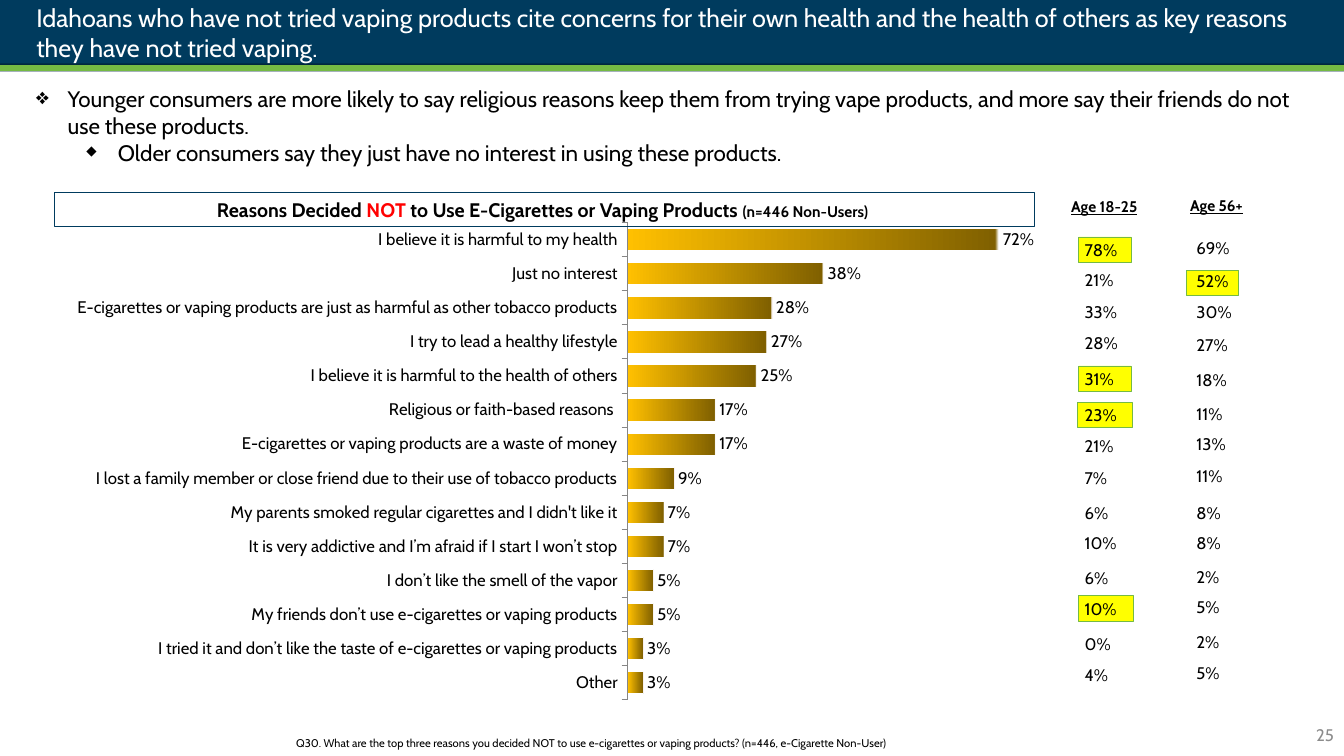
from copy import deepcopy

from lxml import etree
from pptx import Presentation
from pptx.chart.data import CategoryChartData
from pptx.dml.color import RGBColor
from pptx.enum.chart import XL_CHART_TYPE, XL_LABEL_POSITION, XL_TICK_MARK
from pptx.enum.shapes import MSO_CONNECTOR, MSO_SHAPE
from pptx.enum.text import MSO_ANCHOR, MSO_AUTO_SIZE, PP_ALIGN
from pptx.oxml.ns import qn
from pptx.util import Pt

BAR_CHART = XL_CHART_TYPE.BAR_CLUSTERED
LABEL_OUTSIDE = XL_LABEL_POSITION.OUTSIDE_END
TICK_OUTSIDE, TICK_NONE = XL_TICK_MARK.OUTSIDE, XL_TICK_MARK.NONE
STRAIGHT, RECTANGLE = MSO_CONNECTOR.STRAIGHT, MSO_SHAPE.RECTANGLE
TOP, MIDDLE = MSO_ANCHOR.TOP, MSO_ANCHOR.MIDDLE
NO_AUTOFIT = MSO_AUTO_SIZE.NONE
LEFT, CENTER, RIGHT = PP_ALIGN.LEFT, PP_ALIGN.CENTER, PP_ALIGN.RIGHT

FONT = "Cabin"
TITLE_ONLY = 5
NO_TABLE_STYLE = "{2D5ABB26-0587-4C30-8999-92F81FD0307C}"
COLORS = {
    "black": "000000", "white": "FFFFFF", "red": "FF0000", "yellow": "FFFF00",
    "green": "75BA43", "navy": "003B5E", "deep": "00273F", "gray": "8C8C8C",
    "axis": "868686", "gold": "FFC000", "bronze": "806000",
}
REASONS = [
    ("I believe it is harmful to my health", 0.72),
    ("Just no interest", 0.38),
    ("E-cigarettes or vaping products are just as harmful as other tobacco products", 0.28),
    ("I try to lead a healthy lifestyle", 0.27),
    ("I believe it is harmful to the health of others", 0.25),
    ("Religious or faith-based reasons ", 0.17),
    ("E-cigarettes or vaping products are a waste of money", 0.17),
    ("I lost a family member or close friend due to their use of tobacco products", 0.09),
    ("My parents smoked regular cigarettes and I didn't like it", 0.07),
    ("It is very addictive and I’m afraid if I start I won’t stop", 0.07),
    ("I don’t like the smell of the vapor", 0.05),
    ("My friends don’t use e-cigarettes or vaping products", 0.05),
    ("I tried it and don’t like the taste of e-cigarettes or vaping products", 0.03),
    ("Other", 0.03),
]
YOUNGER = [78, 21, 33, 28, 31, 23, 21, 7, 6, 10, 6, 10, 0, 4]
OLDER = [69, 52, 30, 27, 18, 11, 13, 11, 8, 8, 2, 5, 2, 5]
YOUNGER_ROWS = [20, 23, 20, 26, 26, 21, 23, 25, 21, 25, 22, 25, 22, 30]
OLDER_ROWS = [24, 21, 24, 25, 24, 19, 23, 26, 21, 24.5, 21, 25, 22, 30]
HIGHLIGHTS = [(770.4, 169.2, 37.5), (847.4, 193, 37.5), (770.4, 261.4, 37.5),
              (769.7, 287.3, 39), (770.4, 425.5, 39)]


def color(name):
    return RGBColor.from_string(COLORS[name])


class SlideBuilder:
    def __init__(self, slide):
        self.slide = slide
        self.shapes = slide.shapes

    def style(self, font, size, name="black", bold=False, underline=False):
        font.name, font.size = FONT, Pt(size)
        font.bold, font.underline = bold, underline
        font.color.rgb = color(name)

    def add_runs(self, paragraph, runs, align=LEFT):
        paragraph.alignment = align
        paragraph.line_spacing = 1.0
        for text, *look in runs:
            run = paragraph.add_run()
            run.text = text
            self.style(run.font, *look)

    def text(self, box, runs, align=LEFT, anchor=TOP, shape=None):
        shape = shape or self.shapes.add_textbox(*map(Pt, box))
        frame = shape.text_frame
        frame.word_wrap = True
        frame.vertical_anchor = anchor
        self.add_runs(frame.paragraphs[0], runs, align)
        return frame

    def title(self, box, text, size):
        shape = self.shapes.title
        shape.left, shape.top, shape.width, shape.height = map(Pt, box)
        self.shapes._spTree.append(shape._element)
        frame = self.text(box, [(text, size, "white")], shape=shape)
        frame.auto_size = NO_AUTOFIT

    def bullets(self, box, items, size):
        frame = self.shapes.add_textbox(*map(Pt, box)).text_frame
        frame.word_wrap = True
        for index, (text, level, margin, symbol, percent) in enumerate(items):
            paragraph = frame.add_paragraph() if index else frame.paragraphs[0]
            paragraph.level = level
            properties = paragraph._p.get_or_add_pPr()
            properties.set("marL", str(Pt(margin)))
            properties.set("indent", str(Pt(-22.5)))
            etree.SubElement(properties, qn("a:buSzPct")).set("val", str(percent * 1000))
            etree.SubElement(properties, qn("a:buChar")).set("char", symbol)
            self.add_runs(paragraph, [(text, size)])

    def rectangle(self, box, fill=None, line=None, weight=0.5):
        shape = self.shapes.add_shape(RECTANGLE, *map(Pt, box))
        shape.shadow.inherit = False
        if fill:
            shape.fill.solid()
            shape.fill.fore_color.rgb = color(fill)
        else:
            shape.fill.background()
        if line:
            shape.line.color.rgb = color(line)
            shape.line.width = Pt(weight)
        else:
            shape.line.fill.background()
        return shape

    def line(self, start, end, name, weight):
        connector = self.shapes.add_connector(STRAIGHT, *map(Pt, start + end))
        connector.line.color.rgb = color(name)
        connector.line.width = Pt(weight)
        etree.SubElement(connector._element.spPr, qn("a:effectLst"))

    def column(self, box, percents, heights, size):
        table = self.shapes.add_table(len(percents), 1, *map(Pt, box)).table
        table.first_row = table.horz_banding = False
        table._tbl.tblPr.find(qn("a:tableStyleId")).text = NO_TABLE_STYLE
        for row, percent, height in zip(table.rows, percents, heights):
            row.height = Pt(height)
            cell = row.cells[0]
            cell.fill.background()
            self.add_runs(cell.text_frame.paragraphs[0], [(f"{percent}%", size)])

    def bar_chart(self, box, rows, size, plot_area):
        data = CategoryChartData(number_format="0%")
        data.categories = [label for label, value in reversed(rows)]
        data.add_series("Series 1", [value for label, value in reversed(rows)])
        chart = self.shapes.add_chart(BAR_CHART, *map(Pt, box), data).chart
        chart.has_legend = chart.has_title = False
        self.style(chart.font, size)

        categories, values = chart.category_axis, chart.value_axis
        categories.major_tick_mark = TICK_OUTSIDE
        categories.minor_tick_mark = TICK_NONE
        categories.format.line.color.rgb = color("axis")
        self.style(categories.tick_labels.font, size)
        values.visible = values.has_major_gridlines = False
        values.minimum_scale, values.maximum_scale = 0, 0.8

        plot = chart.plots[0]
        plot.gap_width = 60
        plot.vary_by_categories = False
        plot.has_data_labels = True
        labels = plot.data_labels
        labels.show_value = True
        labels.number_format, labels.number_format_is_linked = "0%", False
        labels.position = LABEL_OUTSIDE
        self.style(labels.font, size)

        fill = plot.series[0].format.fill
        fill.gradient()
        fill.gradient_angle = 0
        stops = plot.series[0]._element.find(".//" + qn("a:gsLst"))
        stops.append(deepcopy(stops[-1]))
        for stop, (position, name) in zip(
                fill.gradient_stops, [(0, "gold"), (0.99, "bronze"), (1, "white")]):
            stop.position = position
            stop.color.rgb = color(name)

        area = chart._chartSpace.chart.plotArea
        for old in area.findall(qn("c:layout")):
            area.remove(old)
        layout = etree.Element(qn("c:layout"))
        manual = etree.SubElement(layout, qn("c:manualLayout"))
        settings = [("layoutTarget", "inner"), ("xMode", "edge"), ("yMode", "edge")]
        for tag, value in settings + list(zip("xywh", plot_area)):
            etree.SubElement(manual, qn(f"c:{tag}")).set("val", str(value))
        area.insert(0, layout)


def main():
    presentation = Presentation()
    presentation.slide_width, presentation.slide_height = Pt(960), Pt(540)
    builder = SlideBuilder(
        presentation.slides.add_slide(presentation.slide_layouts[TITLE_ONLY]))

    builder.rectangle((0, 0, 960, 51), "deep")
    for left, top, width in HIGHLIGHTS:
        builder.rectangle((left, top, width, 18), "yellow", "green")
    builder.bullets((18.7, 57.6, 924.5, 124), [
        ("Younger consumers are more likely to say religious reasons keep them from trying vape "
         "products, and more say their friends do not use these products.", 0, 22.5, "❖", 100),
        ("Older consumers say they just have no interest in using these products.",
         1, 58.5, "◆", 60),
    ], 16)
    builder.rectangle((0, 0, 960, 45.4), "navy")
    builder.title((18.7, -2.2, 933, 51), "Idahoans who have not tried vaping products cite concerns "
                  "for their own health and the health of others as key reasons they have not "
                  "tried vaping.", 18)
    builder.text((204.5, 522.7, 540, 17.3), [
        ("Q30. What are the top three reasons you decided NOT to use e-cigarettes or vaping "
         "products? (n=446, e-Cigarette Non-User)", 8)])
    builder.text((744, 510.5, 216, 28.8), [("25", 12, "gray")], RIGHT, MIDDLE)
    builder.bar_chart((38.9, 152, 718.5, 355), REASONS, 12, (0.57, 0.02, 0.41, 0.96))
    heading_box = (38.9, 137.5, 700, 24.5)
    builder.text(heading_box, [
        ("Reasons Decided ", 14, "black", True),
        ("NOT", 14, "red", True),
        (" to Use E-Cigarettes or Vaping Products ", 14, "black", True),
        ("(n=446 Non-Users) ", 11, "black", True),
    ], CENTER, shape=builder.rectangle(heading_box, line="navy", weight=0.75))
    builder.line((0, 48.4), (960, 48.4), "green", 4.5)
    for label, left, top in [("Age 18-25", 758, 137.5), ("Age 56+", 843, 136.8)]:
        builder.text((left, top, 70, 20.6), [(label, 11, "black", True, True)])
    builder.column((847.4, 166.3, 46, 332.6), OLDER, OLDER_ROWS, 12)
    builder.column((767.5, 167.8, 42, 332.6), YOUNGER, YOUNGER_ROWS, 12)
    presentation.save("out.pptx")


if __name__ == "__main__":
    main()
